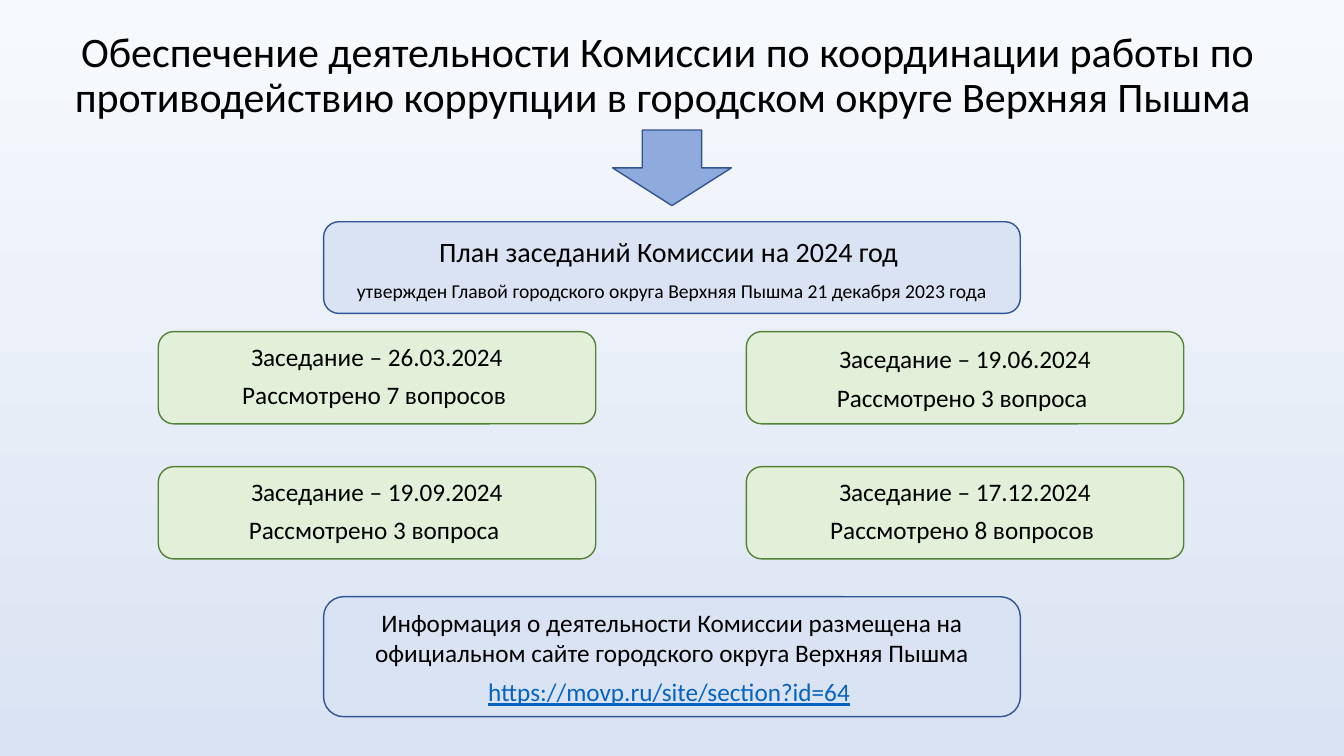
from pptx import Presentation
from pptx import util as u
from pptx.dml.color import RGBColor
from pptx.enum import shapes, text

deck = Presentation()
deck.slide_width, deck.slide_height = u.Inches(13.33), u.Inches(7.5)
slide = deck.slides.add_slide(deck.slide_layouts[6])
col, row = deck.slide_width / 100, deck.slide_height / 100
KIND = shapes.MSO_SHAPE


def tint(code):
    return RGBColor.from_string(code)


def draw(kind, x, y, wide, high, fill, edge, lines=(), gap=1, mid=False):
    area = [int(n) for n in (x * col, y * row, wide * col, high * row)]
    if kind is None:
        shape = slide.shapes.add_textbox(*area)
    else:
        shape = slide.shapes.add_shape(kind, *area)
        shape.shadow.inherit = False
        shape.fill.solid()
        shape.fill.fore_color.rgb = tint(fill)
        shape.line.color.rgb = tint(edge)
        shape.line.width = u.Pt(1)
    frame = shape.text_frame
    frame.word_wrap = True
    frame.vertical_anchor = text.MSO_ANCHOR.MIDDLE if mid else text.MSO_ANCHOR.TOP
    frame.text = "\n".join(words for words, size in lines)
    for para, (words, size) in zip(frame.paragraphs, lines):
        para.alignment = text.PP_ALIGN.CENTER
        para.line_spacing = gap
        para.space_before = u.Pt(6 if kind else 0)
        font = para.runs[0].font
        font.name, font.size = "Calibri", u.Pt(size)
        font.color.rgb = tint("000000")
    return shape


back = slide.background.fill
back.gradient()
back.gradient_angle = 270
for stop, code in zip(back.gradient_stops, ("F7FAFD", "DAE3F3")):
    stop.color.rgb = tint(code)
for stop, place in zip(back.gradient_stops, (0, 1)):
    stop.position = place

title = ("Обеспечение деятельности Комиссии по координации работы по "
         "противодействию коррупции в городском округе Верхняя Пышма ")
draw(None, 4.5, 3.2, 90.4, 13.87, None, None, [(title, 30)], 0.9, True)

thin = 8.85
draw(KIND.DOWN_ARROW, (100 - thin) / 2, 17.2, thin, 10, "8FAADC", "325491")

wide = 51.84
left = (100 - wide) / 2
blue = "DAE3F3", "2F5597"
plan = [("План заседаний Комиссии на 2024 год ", 20),
        ("утвержден Главой городского округа Верхняя Пышма 21 декабря 2023 года", 14)]
draw(KIND.ROUNDED_RECTANGLE, left, 29.33, wide, 12.13, *blue, plan, 1.1)

dates = [("26.03.2024", "7 вопросов"), ("19.06.2024", "3 вопроса"),
         ("19.09.2024", "3 вопроса"), ("17.12.2024", "8 вопросов")]
for i, (date, count) in enumerate(dates):
    down, over = divmod(i, 2)
    lines = [(f"Заседание – {date}", 18), (f"Рассмотрено {count} ", 18)]
    draw(KIND.ROUNDED_RECTANGLE, 11.78 + over * 43.75, 43.87 + down * 17.86,
         32.55, 12.2, "E2F0D9", "548235", lines, mid=i == 1)

site = [("Информация о деятельности Комиссии размещена на "
         "официальном сайте городского округа Верхняя Пышма", 18),
        ("https://movp.ru/site/section?id=64", 18)]
info = draw(KIND.ROUNDED_RECTANGLE, left, 78.93, wide, 15.87, *blue, site)
last = info.text_frame.paragraphs[-1]
link = last.runs[0].font
link.color.rgb = tint("0563C1")
link.underline = True
tail = last.add_run()
tail.text = " "
tail.font.size = u.Pt(18)

deck.save("out.pptx")
